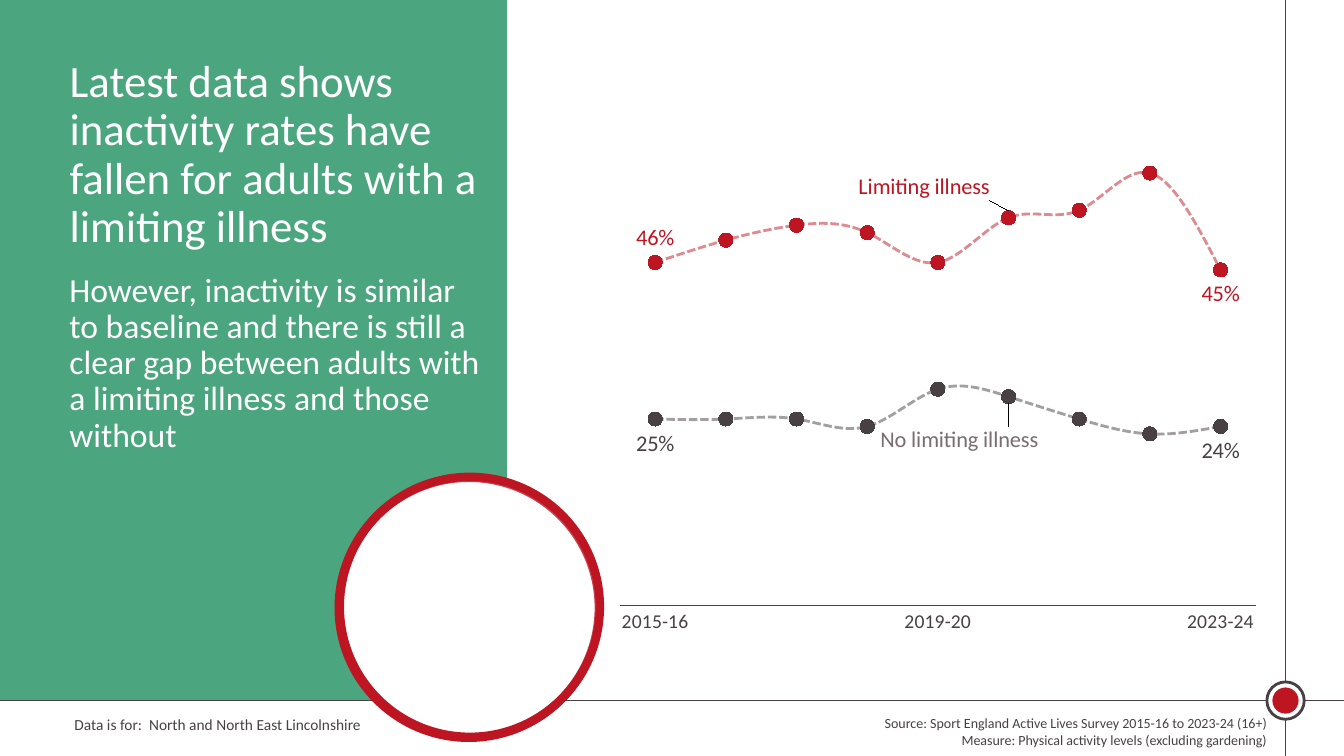
from dataclasses import dataclass
from lxml.etree import SubElement
from pptx import Presentation
from pptx.chart.data import CategoryChartData
from pptx.dml.color import RGBColor
from pptx.enum.chart import (XL_CHART_TYPE, XL_LABEL_POSITION, XL_MARKER_STYLE,
                             XL_TICK_MARK)
from pptx.enum.dml import MSO_LINE
from pptx.enum.shapes import MSO_CONNECTOR, MSO_SHAPE
from pptx.enum.text import MSO_ANCHOR, MSO_AUTO_SIZE, PP_ALIGN
from pptx.oxml.ns import qn
from pptx.util import Inches, Pt

WIDE, HIGH = Inches(13.33), Inches(7.5)


@dataclass(frozen=True)
class Theme:
    face: str = "Calibri"
    ink: str = "484043"
    red: str = "BD1622"
    green: str = "4BA57E"
    grey: str = "7A6C71"
    white: str = "FFFFFF"
    title: int = 32
    lead: int = 24
    label: int = 16
    axis: int = 14
    note: int = 11
    source: int = 10


LOOK = Theme()
ABOVE, BELOW = XL_LABEL_POSITION.ABOVE, XL_LABEL_POSITION.BELOW
YEARS = ["2015-16", "", "", "", "2019-20", "", "", "", "2023-24"]
# name, colour, values, labels: point, shows name, side, colour, shift
GROUPS = [
    ("Limiting illness", LOOK.red,
     [0.46, 0.49, 0.51, 0.5, 0.46, 0.52, 0.53, 0.58, 0.45],
     [(0, False, ABOVE, LOOK.red, None),
      (5, True, ABOVE, LOOK.red, (-0.12, -0.01)),
      (8, False, BELOW, LOOK.red, None)]),
    ("No limiting illness", LOOK.ink,
     [0.25, 0.25, 0.25, 0.24, 0.29, 0.28, 0.25, 0.23, 0.24],
     [(0, False, BELOW, LOOK.ink, None),
      (5, True, BELOW, LOOK.grey, (-0.07, 0.03)),
      (8, False, BELOW, LOOK.ink, None)]),
]


# Shared helpers: lengths are percent shares of the slide
def across(share):
    return round(WIDE * share / 100)


def down(share):
    return round(HIGH * share / 100)


def box(x, y, w, h):
    return across(x), down(y), across(w), down(h)


def put(item, **vals):
    for key, val in vals.items():
        setattr(item, key, val)


def tint(font, size, hue):
    put(font, name=LOOK.face, size=Pt(size))
    font.color.rgb = RGBColor.from_string(hue)


def paint(fill, hue):
    fill.solid()
    fill.fore_color.rgb = RGBColor.from_string(hue)


def stroke(line, hue, width):
    paint(line.fill, hue)
    line.width = Pt(width)


def fade(holder, share):
    for hue in holder.iter(qn("a:srgbClr")):
        SubElement(hue, qn("a:alpha"), val=str(share * 1000))


# Slide parts
def write(shape, lines, size, hue, **form):
    frame = shape.text_frame
    put(frame, word_wrap=True, auto_size=MSO_AUTO_SIZE.NONE,
        vertical_anchor=MSO_ANCHOR.TOP, text="\n".join(lines))
    for para in frame.paragraphs:
        put(para, **{"alignment": PP_ALIGN.LEFT, **form})
        for run in para.runs:
            tint(run.font, size, hue)


def note(slide, area, *style, **form):
    write(slide.shapes.add_textbox(*box(*area)), *style, **form)


def form(slide, kind, area, hue, edge=None):
    shape = slide.shapes.add_shape(kind, *area)
    shape.shadow.inherit = False
    paint(shape.fill, hue)
    if edge:
        stroke(shape.line, *edge)
    else:
        shape.line.fill.background()
    return shape


def ring(slide, x, y, size, hue, edge=None):
    span = across(size)
    area = across(x) - span // 2, down(y) - span // 2, span, span
    return form(slide, MSO_SHAPE.OVAL, area, hue, edge)


def rule(slide, x1, y1, x2, y2):
    line = slide.shapes.add_connector(
        MSO_CONNECTOR.STRAIGHT, across(x1), down(y1), across(x2), down(y2))
    stroke(line.line, LOOK.ink, 0.5)
    SubElement(line._element.spPr, qn("a:effectLst"))


# Chart parts
def place(owner, spot, vals):
    for old in owner.findall(qn("c:layout")):
        owner.remove(old)
    frame = SubElement(owner, qn("c:layout"))
    owner.insert(spot, frame)
    inner = SubElement(frame, qn("c:manualLayout"))
    for key, val in vals.items():
        SubElement(inner, qn("c:" + key), val=str(val))


def tag(plot, spot, named, side, hue, shift):
    label = plot.points[spot].data_label
    tint(label.font, LOOK.label, hue)
    label.position = side
    node = label._dLbl
    node.find(qn("c:showVal")).set("val", str(int(not named)))
    node.find(qn("c:showSerName")).set("val", str(int(named)))
    if shift:
        place(node, 1, dict(zip("xy", shift)))


def trend(plot, hue, tags):
    plot.smooth = True
    line = plot.format.line
    stroke(line, hue, 2)
    line.dash_style = MSO_LINE.SQUARE_DOT
    fade(plot._element.spPr, 50)
    put(plot.marker, style=XL_MARKER_STYLE.CIRCLE, size=10)
    paint(plot.marker.format.fill, hue)
    plot.marker.format.line.fill.background()
    plot.data_labels.show_value = False
    for item in tags:
        tag(plot, *item)


def graph(slide, area):
    data = CategoryChartData(number_format="0%")
    data.categories = YEARS
    for name, _, vals, _ in GROUPS:
        data.add_series(name, vals)
    chart = slide.shapes.add_chart(
        XL_CHART_TYPE.LINE_MARKERS, *box(*area), data).chart
    put(chart, has_title=False, has_legend=False)
    tint(chart.font, LOOK.source, LOOK.ink)
    put(chart.value_axis, visible=False, has_major_gridlines=False,
        minimum_scale=0, maximum_scale=0.7)
    base = chart.category_axis
    put(base, major_tick_mark=XL_TICK_MARK.NONE,
        minor_tick_mark=XL_TICK_MARK.NONE, has_major_gridlines=False)
    tint(base.tick_labels.font, LOOK.axis, LOOK.ink)
    stroke(base.format.line, LOOK.ink, 0.75)
    place(chart._chartSpace.chart.plotArea, 0, dict(
        layoutTarget="inner", xMode="edge", yMode="edge",
        x=0.067, y=0.05, w=0.904, h=0.835))
    chart.plots[0].vary_by_categories = False
    for plot, (_, hue, _, tags) in zip(chart.plots[0].series, GROUPS):
        trend(plot, hue, tags)


def main():
    deck = Presentation()
    put(deck, slide_width=WIDE, slide_height=HIGH)
    slide = deck.slides.add_slide(deck.slide_layouts[5])
    edge, foot = 95.65, 92.67

    # Panel, rules and rings
    note(slide, (4.8, 93.87, 27.23, 3.87),
         ["Data is for:\u00a0 North and North East Lincolnshire".replace("\u00a0", " ")],
         LOOK.note, LOOK.ink)
    form(slide, MSO_SHAPE.RECTANGLE, box(0, 0, 37.73, foot), LOOK.green)
    rule(slide, edge, 0, edge, 100)
    rule(slide, 100, foot, 0, foot)
    ring(slide, edge, foot, 2.78, LOOK.white, (LOOK.ink, 2))
    ring(slide, edge, foot, 1.95, LOOK.red)
    ring(slide, 34.88, 80.4, 19.35, LOOK.white, (LOOK.red, 6))
    glass = ring(slide, 34.96, 80.27, 19.35, LOOK.white, (LOOK.red, 6))
    fade(glass._element.spPr.find(qn("a:solidFill")), 20)

    # Title, raised above the panel
    title = slide.shapes.title
    put(title, **dict(zip(("left", "top", "width", "height"),
                          box(4.43, 7.07, 35.11, 27.2))))
    write(title, ["Latest data shows inactivity rates have fallen for adults "
                  "with a limiting illness"],
          LOOK.title, LOOK.white, line_spacing=0.9)
    slide.shapes._spTree.append(title._element)

    # Source, chart and lead text
    note(slide, (46.44, 93.87, 48.54, 5.87),
         ["Source: Sport England Active Lives Survey 2015-16 to 2023-24 (16+)",
          "Measure: Physical activity levels (excluding gardening)"],
         LOOK.source, LOOK.ink, alignment=PP_ALIGN.RIGHT)
    graph(slide, (42.61, 6.93, 52.36, 82.67))
    note(slide, (4.43, 35.47, 32.11, 25.6),
         ["However, inactivity is similar to baseline and there is still a "
          "clear gap between adults with a limiting illness and those without"],
         LOOK.lead, LOOK.white, line_spacing=0.9)
    deck.save("out.pptx")


if __name__ == "__main__":
    main()
